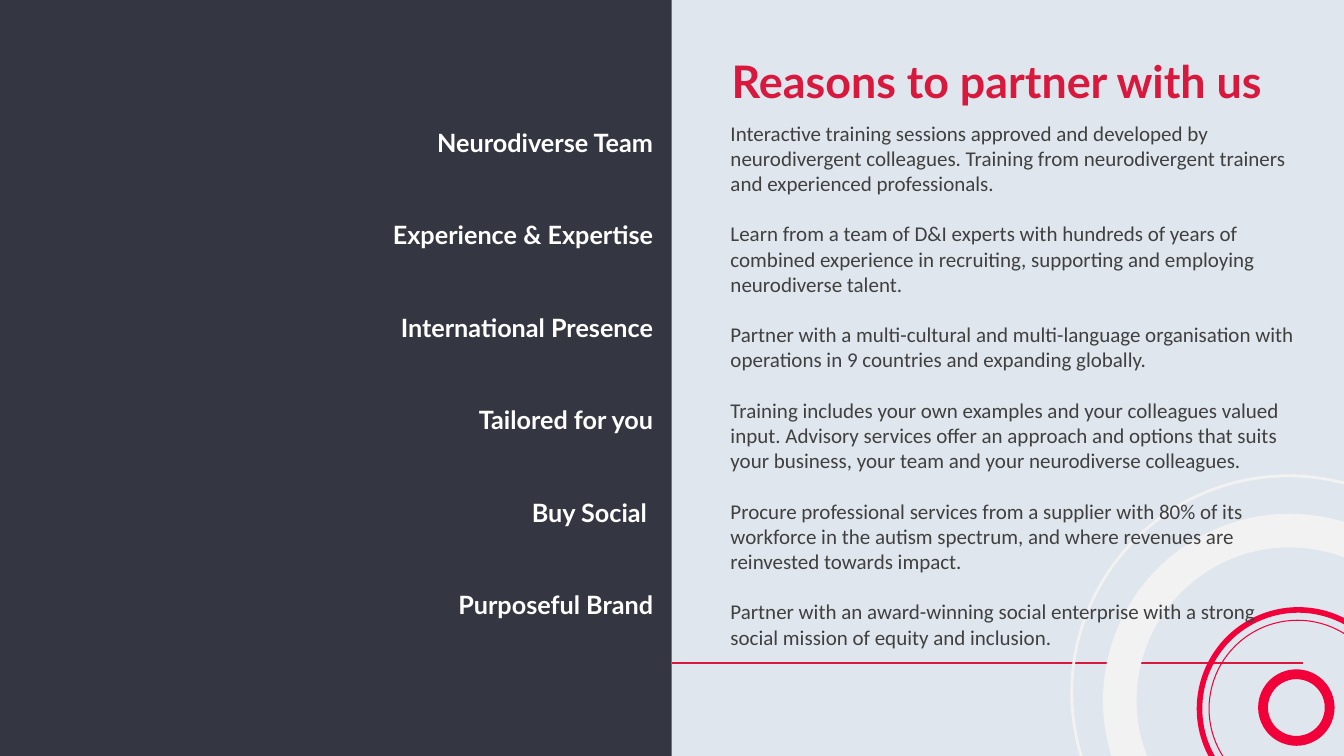
from pptx import Presentation
from pptx.dml.color import RGBColor
from pptx.enum.shapes import MSO_CONNECTOR, MSO_SHAPE
from pptx.enum.text import PP_ALIGN
from pptx.oxml.ns import qn
from pptx.util import Cm, Pt
from lxml import etree

COLORS = {
    "background": "DFE6ED",
    "panel": "343741",
    "title": "D8183D",
    "red": "F2003A",
    "pale": "F2F2F2",
    "white": "FFFFFF",
    "body": "404040",
}


def rgb(name):
    return RGBColor.from_string(COLORS[name])


def add_text(slide, box, lines, font, size, color, bold=False,
             align=PP_ALIGN.LEFT, line_spacing=None, gap=0):
    tf = slide.shapes.add_textbox(*[Cm(v) for v in box]).text_frame
    tf.word_wrap = True
    for i, line in enumerate(lines):
        p = tf.paragraphs[0] if i == 0 else tf.add_paragraph()
        p.text = line
        p.alignment = align
        if line_spacing:
            p.line_spacing = Pt(line_spacing)
        if i > 0:
            p.space_before = Pt(gap)
        for r in p.runs:
            r.font.name = font
            r.font.size = Pt(size)
            r.font.bold = bold
            r.font.color.rgb = rgb(color)
    return tf


prs = Presentation()
prs.slide_width = Cm(33.87)
prs.slide_height = Cm(19.05)
s = prs.slides.add_slide(prs.slide_layouts[6])
s.background.fill.solid()
s.background.fill.fore_color.rgb = rgb("background")

rule = s.shapes.add_connector(
    MSO_CONNECTOR.STRAIGHT, Cm(16.93), Cm(16.71), Cm(32.84), Cm(16.71))
rule.line.color.rgb = rgb("title")
rule.line.width = Pt(1.25)
etree.SubElement(rule._element.spPr, qn("a:effectLst"))

rings = [
    (32.67, 17.83, 0.84, "red", 7),
    (32.7, 17.86, 2.23, "red", 0.75),
    (32.72, 17.86, 2.49, "red", 4),
    (32.5, 17.65, 4.28, "pale", 24),
    (32.47, 17.45, 5.46, "pale", 2),
]
for x, y, radius, color, width in rings:
    ring = s.shapes.add_shape(
        MSO_SHAPE.OVAL, Cm(x - radius), Cm(y - radius), Cm(2 * radius), Cm(2 * radius))
    ring.shadow.inherit = False
    ring.fill.background()
    ring.line.color.rgb = rgb(color)
    ring.line.width = Pt(width)

panel = s.shapes.add_shape(MSO_SHAPE.RECTANGLE, 0, 0, Cm(16.93), prs.slide_height)
panel.shadow.inherit = False
panel.fill.solid()
panel.fill.fore_color.rgb = rgb("panel")
panel.line.fill.background()

reasons = [
    ("Neurodiverse Team",
     "Interactive training sessions approved and developed by neurodivergent colleagues. "
     "Training from neurodivergent trainers and experienced professionals."),
    ("Experience & Expertise",
     "Learn from a team of D&I experts with hundreds of years of combined experience in "
     "recruiting, supporting and employing neurodiverse talent."),
    ("International Presence",
     "Partner with a multi-cultural and multi-language organisation with operations in "
     "9 countries and expanding globally."),
    ("Tailored for you",
     "Training includes your own examples and your colleagues valued input. Advisory "
     "services offer an approach and options that suits your business, your team and "
     "your neurodiverse colleagues."),
    ("Buy Social ",
     "Procure professional services from a supplier with 80% of its workforce in the "
     "autism spectrum, and where revenues are reinvested towards impact."),
    ("Purposeful Brand",
     "Partner with an award-winning social enterprise with a strong social mission of "
     "equity and inclusion."),
]
headings, details = zip(*reasons)
add_text(s, (7.34, 3.07, 9.37, 12.78), headings, "Lato", 18, "white",
         bold=True, align=PP_ALIGN.RIGHT, line_spacing=22, gap=44)
add_text(s, (18.16, 2.9, 14.88, 13.72), details, "Calibri", 15, "body", gap=18)

tf = add_text(s, (18.44, 1.22, 14.88, 1.45), ["Reasons to partner with us"],
              "Lato", 32, "title", bold=True, line_spacing=41.9)
tf.margin_left = tf.margin_top = tf.margin_right = tf.margin_bottom = 0

prs.save("out.pptx")
